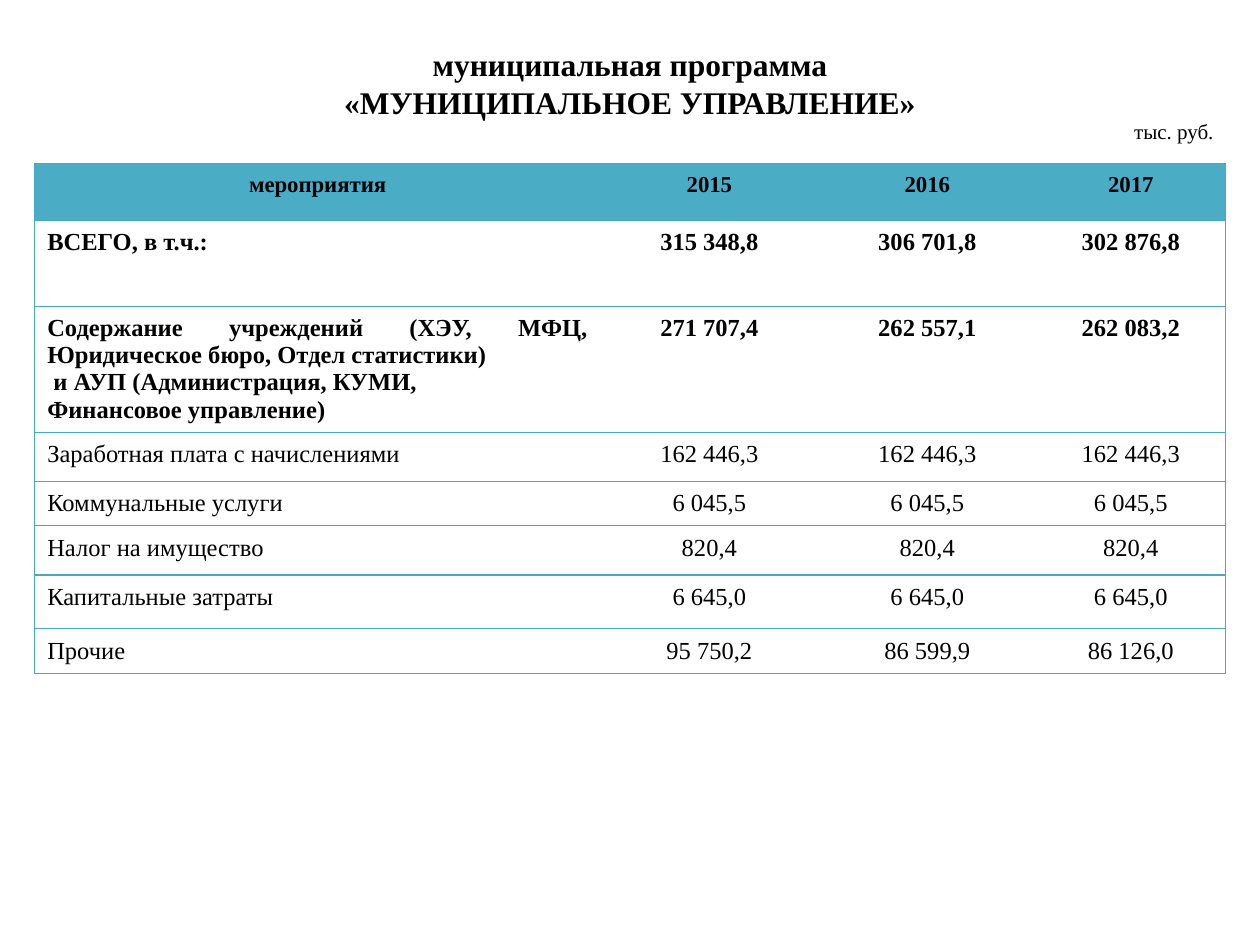
from dataclasses import dataclass

from lxml.etree import SubElement
from pptx import Presentation
from pptx.dml.color import RGBColor
from pptx.enum.text import MSO_ANCHOR as Anchor, MSO_AUTO_SIZE as AutoSize, PP_ALIGN as Align
from pptx.oxml.ns import qn
from pptx.util import Inches, Pt


@dataclass(frozen=True)
class Theme:
    font: str = "Times New Roman"
    ink: str = "000000"
    paper: str = "FFFFFF"
    header: str = "4BACC6"
    border: str = "46AAC5"
    title_size: int = 18
    header_size: int = 13
    body_size: int = 14
    note_size: int = 12
    border_width: float = 0.75


class SlideBuilder:
    def __init__(self, presentation, theme):
        self.theme = theme
        self.width = presentation.slide_width
        self.height = presentation.slide_height
        self.slide = presentation.slides.add_slide(presentation.slide_layouts[5])

    def box(self, left, top, width, height):
        return (int(left * self.width), int(top * self.height),
                int(width * self.width), int(height * self.height))

    def set_text(self, frame, text, size, align, bold=False):
        frame.word_wrap = True
        frame.text = text
        for paragraph in frame.paragraphs:
            paragraph.alignment = align
            font = paragraph.font
            font.name, font.size, font.bold = self.theme.font, Pt(size), bold
            font.color.rgb = RGBColor.from_string(self.theme.ink)

    def title(self, text, *area):
        shape = self.slide.shapes.title
        shape.left, shape.top, shape.width, shape.height = self.box(*area)
        frame = shape.text_frame
        frame.auto_size = AutoSize.NONE
        frame.vertical_anchor = Anchor.MIDDLE
        self.set_text(frame, text, self.theme.title_size, Align.CENTER, True)

    def note(self, text, *area):
        shape = self.slide.shapes.add_textbox(*self.box(*area))
        shape.text_frame.auto_size = AutoSize.SHAPE_TO_FIT_TEXT
        self.set_text(shape.text_frame, text, self.theme.note_size, Align.RIGHT)

    def borders(self, cell, visible):
        properties = cell._tc.get_or_add_tcPr()
        for side in "LRTB":
            line = SubElement(properties, qn(f"a:ln{side}"),
                              w=str(Pt(self.theme.border_width)))
            if side in visible:
                fill = SubElement(line, qn("a:solidFill"))
                SubElement(fill, qn("a:srgbClr"), val=self.theme.border)
            else:
                SubElement(line, qn("a:noFill"))

    def table(self, rows, left, top, column_shares, row_shares, bold_rows):
        area = self.box(left, top, sum(column_shares), sum(row_shares))
        table = self.slide.shapes.add_table(len(rows), len(column_shares), *area).table
        table.first_row = table.horz_banding = False
        for column, share in zip(table.columns, column_shares):
            column.width = int(share * self.width)
        for row, share in zip(table.rows, row_shares):
            row.height = int(share * self.height)
        last = len(column_shares) - 1
        for row_index, values in enumerate(rows):
            is_header = row_index == 0
            size = self.theme.header_size if is_header else self.theme.body_size
            color = self.theme.header if is_header else self.theme.paper
            for column_index, text in enumerate(values):
                cell = table.cell(row_index, column_index)
                cell.margin_left = cell.margin_right = Inches(0.1)
                cell.margin_top = cell.margin_bottom = Inches(0.07)
                is_label = column_index == 0 and not is_header
                self.set_text(cell.text_frame, text, size,
                              Align.JUSTIFY if is_label else Align.CENTER,
                              row_index < bold_rows)
                self.borders(cell, "TB" + "L" * (column_index == 0)
                             + "R" * (column_index == last))
                cell.fill.solid()
                cell.fill.fore_color.rgb = RGBColor.from_string(color)


ROWS = [
    ("мероприятия", "2015", "2016", "2017"),
    ("ВСЕГО, в т.ч.:", "315 348,8", "306 701,8", "302 876,8"),
    ("Содержание учреждений (ХЭУ, МФЦ, Юридическое бюро, Отдел статистики)\n"
     " и АУП (Администрация, КУМИ,\nФинансовое управление)",
     "271 707,4", "262 557,1", "262 083,2"),
    ("Заработная плата с начислениями", *["162 446,3"] * 3),
    ("Коммунальные услуги", *["6 045,5"] * 3),
    ("Налог на имущество", *["820,4"] * 3),
    ("Капитальные затраты", *["6 645,0"] * 3),
    ("Прочие", "95 750,2", "86 599,9", "86 126,0"),
]
COLUMN_SHARES = [0.449, 0.173, 0.173, 0.15]
ROW_SHARES = [0.06, 0.091, 0.123, 0.052, 0.045, 0.052, 0.057, 0.041]


def main():
    presentation = Presentation()
    presentation.slide_width, presentation.slide_height = Inches(10), Inches(7.5)
    builder = SlideBuilder(presentation, Theme())
    builder.title("муниципальная программа\v«МУНИЦИПАЛЬНОЕ УПРАВЛЕНИЕ»",
                  0.05, 0.04, 0.9, 0.096)
    builder.table(ROWS, 0.0275, 0.173, COLUMN_SHARES, ROW_SHARES, bold_rows=3)
    builder.note("тыс. руб.", 0.823, 0.119, 0.15, 0.04)
    presentation.save("out.pptx")


if __name__ == "__main__":
    main()
